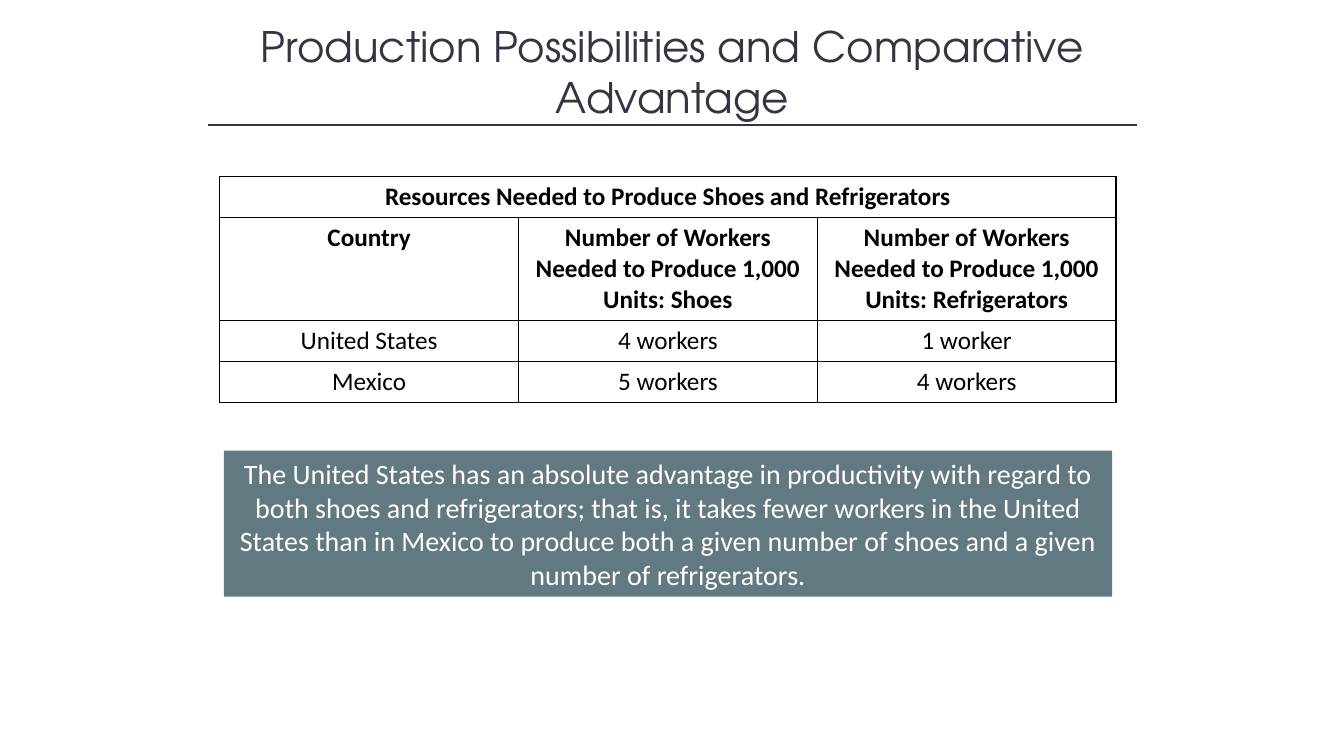
from lxml.etree import SubElement
from pptx import Presentation
from pptx.dml.color import RGBColor
from pptx.enum.shapes import MSO_CONNECTOR, MSO_SHAPE
from pptx.enum.text import MSO_ANCHOR, PP_ALIGN
from pptx.oxml.ns import qn
from pptx.util import Inches, Pt

TITLE = "Production Possibilities and Comparative Advantage"
TABLE_ROWS = [
    ("Resources Needed to Produce Shoes and Refrigerators", "", ""),
    ("Country",
     "Number of Workers Needed to Produce 1,000 Units: Shoes",
     "Number of Workers Needed to Produce 1,000 Units: Refrigerators"),
    ("United States", "4 workers", "1 worker"),
    ("Mexico", "5 workers", "4 workers"),
]
CONCLUSION = (
    "The United States has an absolute advantage in productivity with regard to "
    "both shoes and refrigerators; that is, it takes fewer workers in the United "
    "States than in Mexico to produce both a given number of shoes and a given "
    "number of refrigerators."
)

INK, BLACK, WHITE, SLATE = "323542", "000000", "FFFFFF", "627981"
ROW_HEIGHTS = (0.41, 1.0, 0.41, 0.41)
HEADER_ROWS = 2
TITLE_FONT = {"name": "TeX Gyre Adventor", "size": Pt(30), "bold": False}
BODY_FONT = {"name": "Calibri", "size": Pt(20), "bold": False}
CELL_FONT = {"name": "Calibri", "size": Pt(18)}


def rgb(value):
    return RGBColor.from_string(value)


def write(frame, text, color, font):
    """Put one centred, formatted paragraph in a text frame."""
    frame.word_wrap = True
    para = frame.paragraphs[0]
    para.alignment = PP_ALIGN.CENTER
    span = para.add_run()
    span.text = text
    span.font.color.rgb = rgb(color)
    for name, value in font.items():
        setattr(span.font, name, value)


def add_borders(cell, color):
    properties = cell._tc.get_or_add_tcPr()
    for side in ("a:lnL", "a:lnR", "a:lnT", "a:lnB"):
        line = SubElement(properties, qn(side), w=str(Pt(1)))
        fill = SubElement(line, qn("a:solidFill"))
        SubElement(fill, qn("a:srgbClr"), val=color)


def add_title(page):
    title = page.shapes.title
    place = {"left": 1.67, "top": 0.15, "width": 10, "height": 1.11}
    for name, value in place.items():
        setattr(title, name, Inches(value))
    title.text_frame.vertical_anchor = MSO_ANCHOR.MIDDLE
    write(title.text_frame, TITLE, INK, TITLE_FONT)

    rule = page.shapes.add_connector(
        MSO_CONNECTOR.STRAIGHT,
        Inches(2.06), Inches(1.24), Inches(11.28), Inches(1.24))
    rule.line.color.rgb = rgb(INK)
    rule.line.width = Pt(1)
    SubElement(rule._element.spPr, qn("a:effectLst"))


def add_workers_table(page):
    table = page.shapes.add_table(
        len(TABLE_ROWS), len(TABLE_ROWS[0]), Inches(2.18), Inches(1.75),
        Inches(8.89), Inches(sum(ROW_HEIGHTS))).table
    table.first_row = table.horz_banding = False
    for row, height in zip(table.rows, ROW_HEIGHTS):
        row.height = Inches(height)
    table.cell(0, 0).merge(table.cell(0, 2))
    for r, texts in enumerate(TABLE_ROWS):
        for c, text in enumerate(texts):
            cell = table.cell(r, c)
            add_borders(cell, BLACK)
            cell.fill.background()
            if text:
                font = {**CELL_FONT, "bold": r < HEADER_ROWS}
                write(cell.text_frame, text, BLACK, font)


def add_conclusion(page):
    box = page.shapes.add_shape(
        MSO_SHAPE.RECTANGLE,
        Inches(2.22), Inches(4.47), Inches(8.81), Inches(1.45))
    box.shadow.inherit = False
    box.fill.solid()
    box.fill.fore_color.rgb = rgb(SLATE)
    box.line.fill.background()
    box.text_frame.vertical_anchor = MSO_ANCHOR.MIDDLE
    write(box.text_frame, CONCLUSION, WHITE, BODY_FONT)


def main():
    deck = Presentation()
    deck.slide_width, deck.slide_height = Inches(13.33), Inches(7.5)
    page = deck.slides.add_slide(deck.slide_layouts[5])
    add_title(page)
    add_workers_table(page)
    add_conclusion(page)
    deck.save("out.pptx")


if __name__ == "__main__":
    main()
